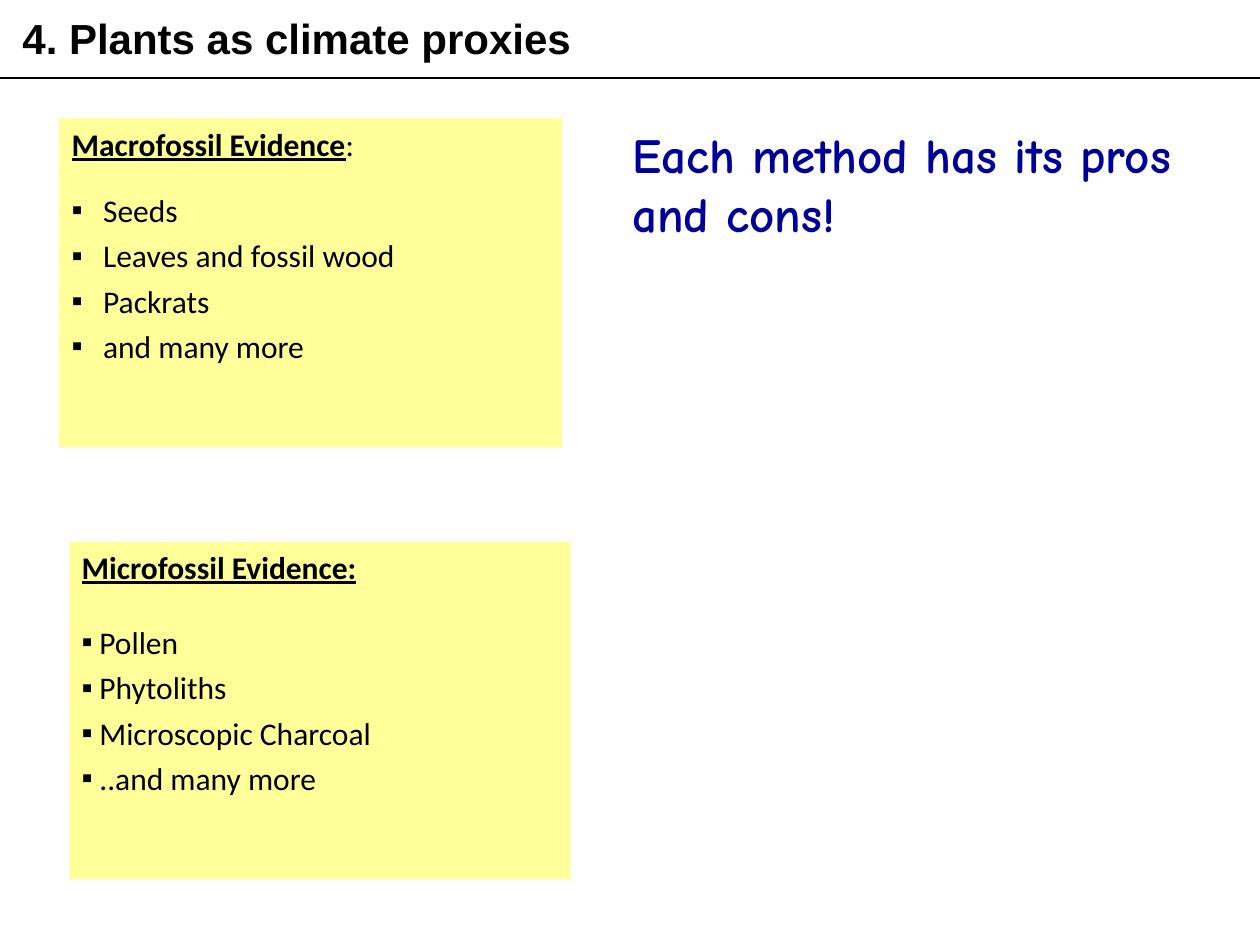
from dataclasses import dataclass

from lxml.etree import SubElement
from pptx import Presentation
from pptx.dml.color import RGBColor
from pptx.enum.shapes import MSO_CONNECTOR, MSO_SHAPE
from pptx.enum.text import MSO_ANCHOR, PP_ALIGN
from pptx.oxml.ns import qn
from pptx.util import Inches, Pt

COLORS = {"text": "000000", "panel": "FFFF99", "remark": "000099"}


@dataclass(frozen=True)
class Box:
    left: float
    top: float
    width: float
    height: float

    def lengths(self):
        return [Inches(value) for value in (self.left, self.top, self.width, self.height)]


@dataclass(frozen=True)
class EvidencePanel:
    box: Box
    heading: str
    suffix: str
    items: tuple[str, ...]
    indent: float
    gap: float


PANELS = (
    EvidencePanel(
        Box(0.47, 0.94, 3.99, 2.61), "Macrofossil Evidence", ":",
        ("Seeds", "Leaves and fossil wood", "Packrats", "and many more"), 0.25, 12,
    ),
    EvidencePanel(
        Box(0.55, 4.3, 3.98, 2.68), "Microfossil Evidence:", "",
        ("Pollen", "Phytoliths", "Microscopic Charcoal", "..and many more"), 0.14, 17,
    ),
)


def add_text(paragraph, text: str, *, font="Calibri", size=18, color="text",
             bold=False, underline=False) -> None:
    paragraph.alignment = PP_ALIGN.LEFT
    run = paragraph.add_run()
    run.text = text
    run.font.name = font
    run.font.size = Pt(size)
    run.font.bold = bold
    run.font.underline = underline
    run.font.color.rgb = RGBColor.from_string(COLORS[color])


def add_bullet(paragraph, indent: float) -> None:
    properties = paragraph._p.get_or_add_pPr()
    properties.set("marL", str(Inches(indent)))
    properties.set("indent", str(-Inches(indent)))
    SubElement(properties, qn("a:buFont")).set("typeface", "Arial")
    SubElement(properties, qn("a:buChar")).set("char", "▪")


def add_text_box(slide, box: Box, text: str, **text_format) -> None:
    shape = slide.shapes.add_textbox(*box.lengths())
    shape.text_frame.word_wrap = True
    add_text(shape.text_frame.paragraphs[0], text, **text_format)


def add_rule(slide, top: float, width: float) -> None:
    connector = slide.shapes.add_connector(
        MSO_CONNECTOR.STRAIGHT, Inches(0), Inches(top), Inches(width), Inches(top)
    )
    connector.line.color.rgb = RGBColor.from_string(COLORS["text"])
    connector.line.width = Pt(0.75)
    SubElement(connector._element.spPr, qn("a:effectLst"))


def add_panel(slide, panel: EvidencePanel) -> None:
    shape = slide.shapes.add_shape(MSO_SHAPE.RECTANGLE, *panel.box.lengths())
    shape.shadow.inherit = False
    shape.fill.solid()
    shape.fill.fore_color.rgb = RGBColor.from_string(COLORS["panel"])
    shape.line.fill.background()
    frame = shape.text_frame
    frame.word_wrap = True
    frame.vertical_anchor = MSO_ANCHOR.TOP
    heading = frame.paragraphs[0]
    add_text(heading, panel.heading, bold=True, underline=True)
    if panel.suffix:
        add_text(heading, panel.suffix)
    for index, item in enumerate(panel.items):
        paragraph = frame.add_paragraph()
        add_bullet(paragraph, panel.indent)
        paragraph.line_spacing = 1.2
        paragraph.space_before = Pt(0 if index else panel.gap)
        add_text(paragraph, item)


def main() -> None:
    presentation = Presentation()
    presentation.slide_width = Inches(10)
    presentation.slide_height = Inches(7.5)
    slide = presentation.slides.add_slide(presentation.slide_layouts[6])
    add_text_box(slide, Box(0.08, 0.05, 9.61, 0.5), "4. Plants as climate proxies",
                 font="Arial", size=24, bold=True)
    add_rule(slide, 0.62, 10)
    for panel in PANELS:
        add_panel(slide, panel)
    add_text_box(slide, Box(4.92, 0.94, 4.77, 1.04), "Each method has its pros and cons!",
                 font="Comic Neue", size=28, color="remark", bold=True)
    presentation.save("out.pptx")


if __name__ == "__main__":
    main()
